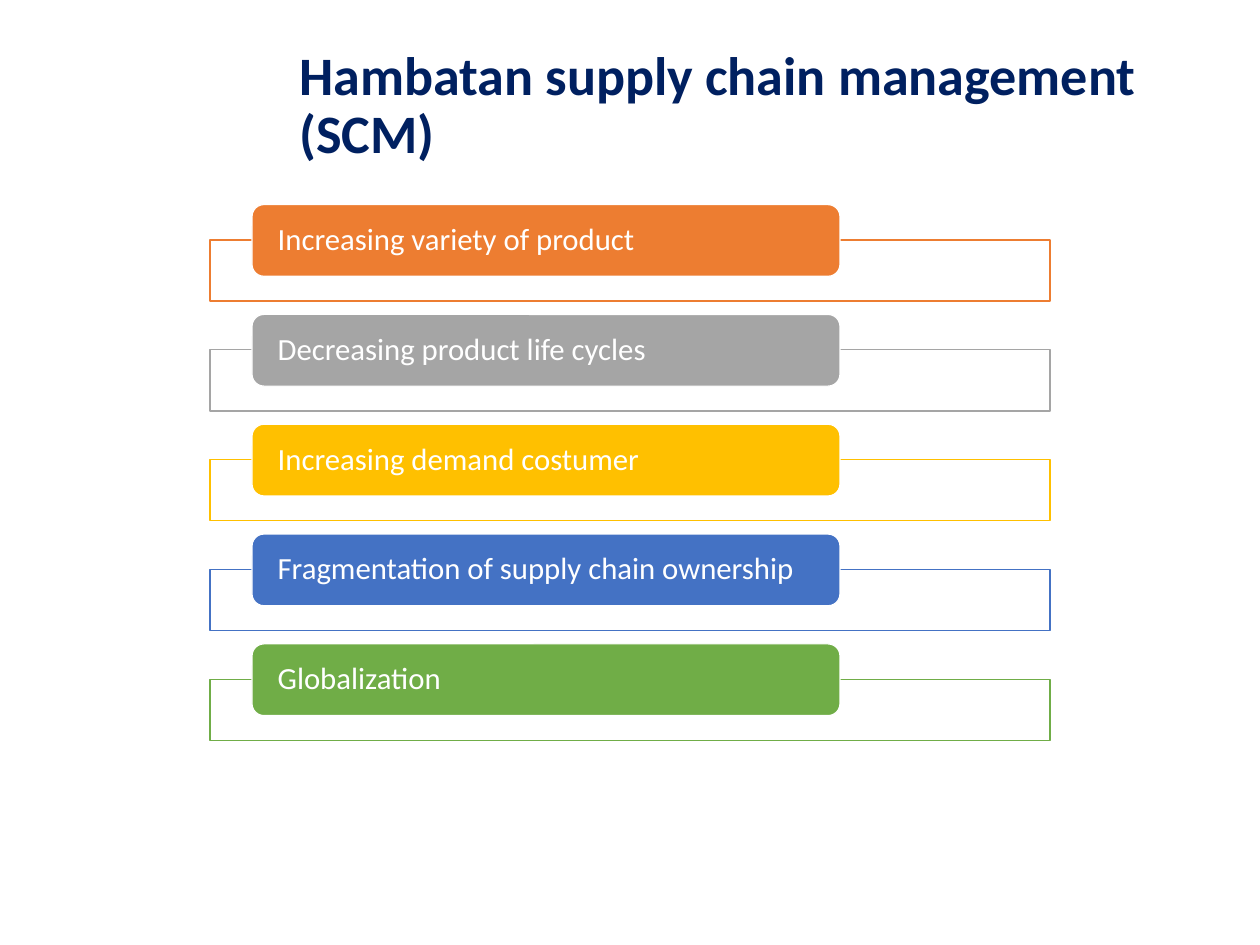
from pptx import Presentation
from pptx.dml.color import RGBColor
from pptx.enum.shapes import MSO_SHAPE
from pptx.enum.text import MSO_ANCHOR, PP_ALIGN
from pptx.util import Inches, Pt

SLIDE_W, SLIDE_H = 14.22, 10.67
COLUMN = SLIDE_W / 6
ROW = 1.24
FIRST_ROW = 2.31
FRAME_W = 4 * COLUMN
FRAME_DROP, FRAME_H = 0.4, 0.69
BAR_INDENT, BAR_W, BAR_H = 0.05 * FRAME_W, 0.7 * FRAME_W, 0.81

COLORS = {
    "navy": "002060",
    "white": "FFFFFF",
    "orange": "ED7D31",
    "gray": "A5A5A5",
    "gold": "FFC000",
    "blue": "4472C4",
    "green": "70AD47",
}

TITLE = "Hambatan supply chain management (SCM)"
OBSTACLES = [
    ("Increasing variety of product", "orange"),
    ("Decreasing product life cycles", "gray"),
    ("Increasing demand costumer", "gold"),
    ("Fragmentation of supply chain ownership", "blue"),
    ("Globalization", "green"),
]


def rgb(name):
    return RGBColor.from_string(COLORS[name])


def set_text(sp, text, size, color, bold=False, inset=0.1):
    tf = sp.text_frame
    tf.text = text
    tf.word_wrap = True
    tf.vertical_anchor = MSO_ANCHOR.MIDDLE
    tf.margin_left = tf.margin_right = Inches(inset)
    tf.margin_top = tf.margin_bottom = 0
    p = tf.paragraphs[0]
    p.alignment = PP_ALIGN.LEFT
    p.line_spacing = 0.9
    r = p.runs[0]
    r.font.name = "Calibri"
    r.font.size = Pt(size)
    r.font.bold = bold
    r.font.color.rgb = rgb(color)


def add_box(slide, kind, left, top, width, height, fill, line):
    sp = slide.shapes.add_shape(
        kind, Inches(left), Inches(top), Inches(width), Inches(height))
    sp.shadow.inherit = False
    sp.fill.solid()
    sp.fill.fore_color.rgb = rgb(fill)
    sp.line.color.rgb = rgb(line)
    sp.line.width = Pt(1)
    return sp


def add_title(slide):
    sp = slide.shapes.add_textbox(
        Inches(3.28), Inches(0.58), Inches(SLIDE_W - 3.28), Inches(1.25))
    set_text(sp, TITLE, 44, "navy", bold=True)


def add_obstacle(slide, row, text, color):
    top = FIRST_ROW + row * ROW
    add_box(slide, MSO_SHAPE.RECTANGLE, COLUMN, top + FRAME_DROP,
            FRAME_W, FRAME_H, "white", color)
    bar = add_box(slide, MSO_SHAPE.ROUNDED_RECTANGLE, COLUMN + BAR_INDENT, top,
                  BAR_W, BAR_H, color, "white")
    set_text(bar, text, 25, "white", inset=0.25)


def main():
    """Build the slide on supply chain obstacles."""
    prs = Presentation()
    prs.slide_width, prs.slide_height = Inches(SLIDE_W), Inches(SLIDE_H)
    slide = prs.slides.add_slide(prs.slide_layouts[6])
    add_title(slide)
    for row, (text, color) in enumerate(OBSTACLES):
        add_obstacle(slide, row, text, color)
    prs.save("out.pptx")


if __name__ == "__main__":
    main()
